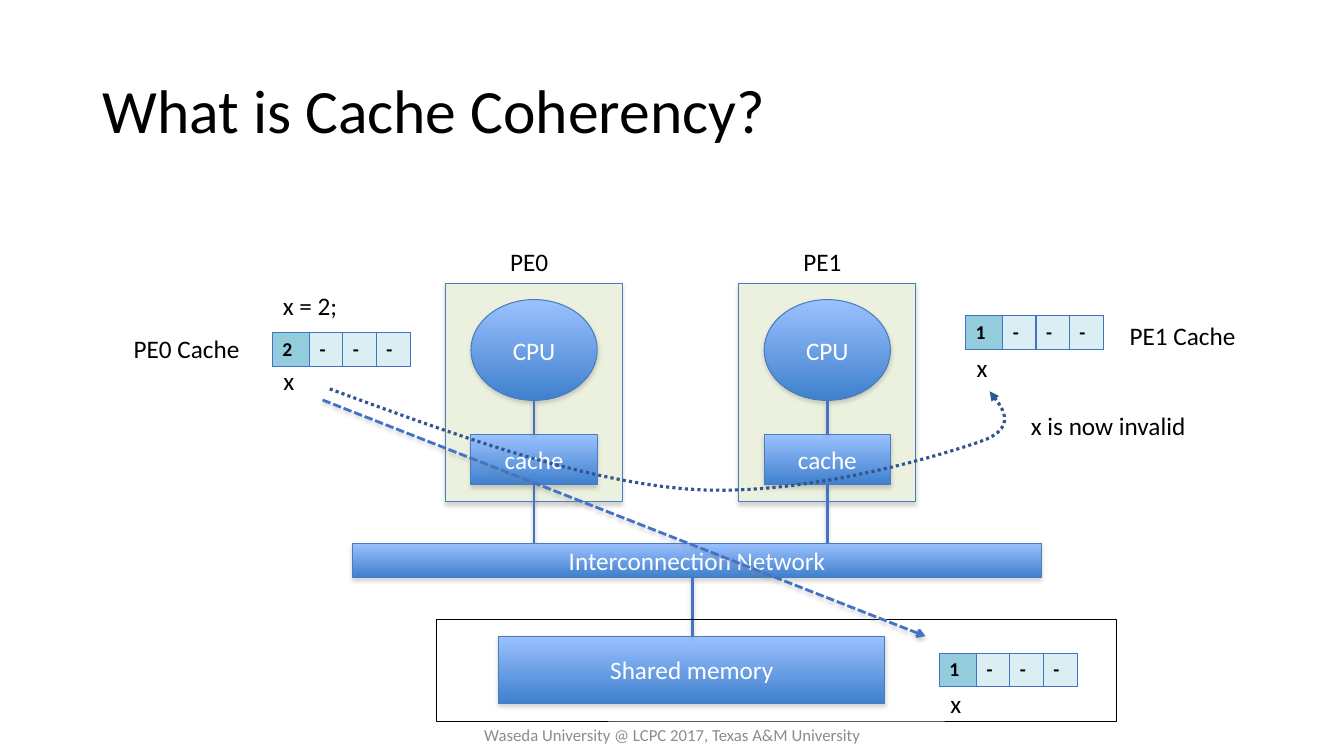
from lxml import etree
from pptx import Presentation
from pptx import util as u
from pptx.dml.color import RGBColor
from pptx.enum import dml, shapes, text
from pptx.oxml import parse_xml
from pptx.oxml.ns import qn

FONT = "Calibri"
BLACK = RGBColor(0x00, 0x00, 0x00)
WHITE = RGBColor(0xFF, 0xFF, 0xFF)
GRAY = RGBColor(0x8C, 0x8C, 0x8C)
SHADOW = RGBColor(0x80, 0x80, 0x80)
BLOCK_TOP = RGBColor(0x9B, 0xC1, 0xFF)
BLOCK_BOTTOM = RGBColor(0x3F, 0x80, 0xCD)
BLOCK_EDGE = RGBColor(0x4A, 0x7E, 0xBB)
LINK = RGBColor(0x44, 0x72, 0xC4)
CURVE = RGBColor(0x32, 0x54, 0x91)
PALE_GREEN = RGBColor(0xEB, 0xF1, 0xDE)
TEAL = RGBColor(0x93, 0xCD, 0xDD)
PALE_TEAL = RGBColor(0xDB, 0xEE, 0xF4)

DRAWING = 'xmlns:a="http://schemas.openxmlformats.org/drawingml/2006/main"'
CELL_WIDTHS = (0.94, 0.84, 0.84, 0.86)
CELL_HEIGHT = 0.84
LABEL_HEIGHT = 1.02


def lengths(*values):
    return [u.Cm(value) for value in values]


def style_font(paragraph, size, color, bold=False):
    font = paragraph.font
    font.name = FONT
    font.size = u.Pt(size)
    font.color.rgb = color
    font.bold = bold


def add_shadow(shape, alpha, distance):
    shape._element.spPr.append(parse_xml(
        f'<a:effectLst {DRAWING}><a:outerShdw blurRad="{u.Pt(3.1)}" '
        f'dist="{u.Pt(distance)}" dir="5400000" rotWithShape="0">'
        f'<a:srgbClr val="{SHADOW}"><a:alpha val="{alpha}000"/></a:srgbClr>'
        f'</a:outerShdw></a:effectLst>'))


def add_arrowhead(shape, kind):
    outline = shape.line._get_or_add_ln()
    etree.SubElement(outline, qn("a:tailEnd"), type=kind)


def add_text(slide, box, content, size=18, color=BLACK, wrap=False,
             anchor=text.MSO_ANCHOR.TOP, align=text.PP_ALIGN.LEFT):
    frame = slide.shapes.add_textbox(*lengths(*box)).text_frame
    frame.word_wrap = wrap
    frame.vertical_anchor = anchor
    paragraph = frame.paragraphs[0]
    paragraph.text = content
    paragraph.alignment = align
    style_font(paragraph, size, color)
    return paragraph


def add_block(slide, box, label, kind=shapes.MSO_SHAPE.RECTANGLE):
    block = slide.shapes.add_shape(kind, *lengths(*box))
    block.fill.gradient()
    block.fill.gradient_angle = 270
    for stop, color in zip(block.fill.gradient_stops, (BLOCK_TOP, BLOCK_BOTTOM)):
        stop.color.rgb = color
    block.line.color.rgb = BLOCK_EDGE
    block.line.width = u.Pt(0.75)
    add_shadow(block, 35, 1.8)
    frame = block.text_frame
    frame.margin_top = frame.margin_bottom = 0
    frame.vertical_anchor = text.MSO_ANCHOR.MIDDLE
    paragraph = frame.paragraphs[0]
    paragraph.text = label
    paragraph.alignment = text.PP_ALIGN.CENTER
    style_font(paragraph, 18, WHITE)


def add_link(slide, start, end):
    link = slide.shapes.add_connector(
        shapes.MSO_CONNECTOR.STRAIGHT, *lengths(*start, *end))
    link.line.color.rgb = LINK
    link.line.width = u.Pt(2)
    add_shadow(link, 38, 1.6)
    return link


def add_processor(slide, box, label):
    left, top, width, height = box
    center = left + width / 2
    panel = slide.shapes.add_shape(shapes.MSO_SHAPE.RECTANGLE, *lengths(*box))
    panel.fill.solid()
    panel.fill.fore_color.rgb = PALE_GREEN
    panel.line.color.rgb = BLOCK_EDGE
    panel.line.width = u.Pt(0.75)
    add_shadow(panel, 35, 1.8)
    inner = width - 1.27
    add_block(slide, (left + 0.64, top + 0.41, inner, 2.54), "CPU",
              shapes.MSO_SHAPE.OVAL)
    add_block(slide, (left + 0.64, top + 3.81, inner, 1.27), "cache")
    add_link(slide, (center, top + 3.81), (center, top + 2.95))
    add_link(slide, (center, top + 5.08), (center, top + 6.55))
    add_text(slide, (center - 0.85, top - 1.07, 1.47, LABEL_HEIGHT), label)


def add_cell_borders(cell):
    properties = cell._tc.get_or_add_tcPr()
    for index, side in enumerate(("lnL", "lnR", "lnT", "lnB")):
        properties.insert(index, parse_xml(
            f'<a:{side} {DRAWING} w="{u.Pt(1)}"><a:solidFill>'
            f'<a:srgbClr val="{LINK}"/></a:solidFill></a:{side}>'))


def add_cache_line(slide, left, top, value, label_drop):
    table = slide.shapes.add_table(1, len(CELL_WIDTHS), *lengths(
        left, top, sum(CELL_WIDTHS), CELL_HEIGHT)).table
    table.first_row = table.horz_banding = False
    for index, width in enumerate(CELL_WIDTHS):
        table.columns[index].width = u.Cm(width)
        cell = table.cell(0, index)
        cell.fill.solid()
        cell.fill.fore_color.rgb = PALE_TEAL if index else TEAL
        cell.vertical_anchor = text.MSO_ANCHOR.MIDDLE
        paragraph = cell.text_frame.paragraphs[0]
        paragraph.text = "-" if index else value
        style_font(paragraph, 14, BLACK, bold=True)
        add_cell_borders(cell)
    add_text(slide, (left + 0.03, top + label_drop, 0.79, LABEL_HEIGHT), "x")


def add_memory(slide, box):
    left, top, width, height = box
    add_block(slide, (left + 1.57, top + 0.43, 9.73, 1.7), "Shared memory")
    add_link(slide, (left + 6.45, top - 1.05), (left + 6.45, top + 0.43))
    add_cache_line(slide, left + 12.67, top + 0.86, "1", 0.76)
    frame = slide.shapes.add_shape(shapes.MSO_SHAPE.RECTANGLE, *lengths(*box))
    frame.shadow.inherit = False
    frame.fill.background()
    frame.line.color.rgb = BLACK
    frame.line.width = u.Pt(0.5)


def bezier_points(start, first, second, end, steps=16):
    for step in range(1, steps + 1):
        t = step / steps
        weights = ((1 - t) ** 3, 3 * t * (1 - t) ** 2, 3 * t ** 2 * (1 - t), t ** 3)
        yield lengths(*(sum(weight * value for weight, value in zip(weights, axis))
                        for axis in zip(start, first, second, end)))


def add_invalidation(slide, start, segments):
    builder = slide.shapes.build_freeform(*lengths(*start))
    for first, second, end in segments:
        builder.add_line_segments(bezier_points(start, first, second, end), close=False)
        start = end
    curve = builder.convert_to_shape()
    curve.shadow.inherit = False
    curve.fill.background()
    curve.line.color.rgb = CURVE
    curve.line.width = u.Pt(2.25)
    curve.line.dash_style = dml.MSO_LINE.ROUND_DOT
    add_arrowhead(curve, "triangle")


def add_write_back(slide, start, end):
    arrow = add_link(slide, start, end)
    arrow.line.dash_style = dml.MSO_LINE.SQUARE_DOT
    add_arrowhead(arrow, "arrow")


def main():
    presentation = Presentation()
    presentation.slide_width = u.Cm(33.87)
    presentation.slide_height = u.Cm(19.05)
    slide = presentation.slides.add_slide(presentation.slide_layouts[6])
    middle = text.MSO_ANCHOR.MIDDLE
    title = add_text(slide, (2.34, 1.02, 29.21, 3.68), "What is Cache Coherency?",
                     size=44, wrap=True, anchor=middle)
    title.line_spacing = 0.9
    for left, label in ((11.23, "PE0"), (18.62, "PE1")):
        add_processor(slide, (left, 7.14, 4.45, 5.51), label)
    add_block(slide, (8.89, 13.69, 17.35, 0.86), "Interconnection Network")
    add_memory(slide, (11, 15.6, 17.14, 2.57))
    add_cache_line(slide, 6.86, 8.38, "2", 0.71)
    add_cache_line(slide, 24.33, 7.95, "1", 0.81)
    for left, top, width, label in (
            (3.12, 8.28, 3.2, "PE0 Cache"),
            (28.22, 7.95, 3.2, "PE1 Cache"),
            (6.88, 7.19, 1.9, "x = 2;"),
            (25.73, 10.21, 4.45, "x is now invalid")):
        add_text(slide, (left, top, width, LABEL_HEIGHT), label)
    add_write_back(slide, (8.13, 10.08), (23.32, 16.03))
    add_invalidation(slide, (8.31, 9.8), (
        ((11.43, 10.95), (14.55, 12.09), (17.27, 12.32)),
        ((20.02, 12.55), (23.37, 11.58), (24.64, 11.15)),
        ((25.93, 10.74), (24.99, 10.01), (24.94, 9.86))))
    add_text(slide, (11.23, 18.01, 11.43, LABEL_HEIGHT),
             "Waseda University @ LCPC 2017, Texas A&M University",
             size=12, color=GRAY, wrap=True, anchor=middle,
             align=text.PP_ALIGN.CENTER)
    presentation.save("out.pptx")


if __name__ == "__main__":
    main()
